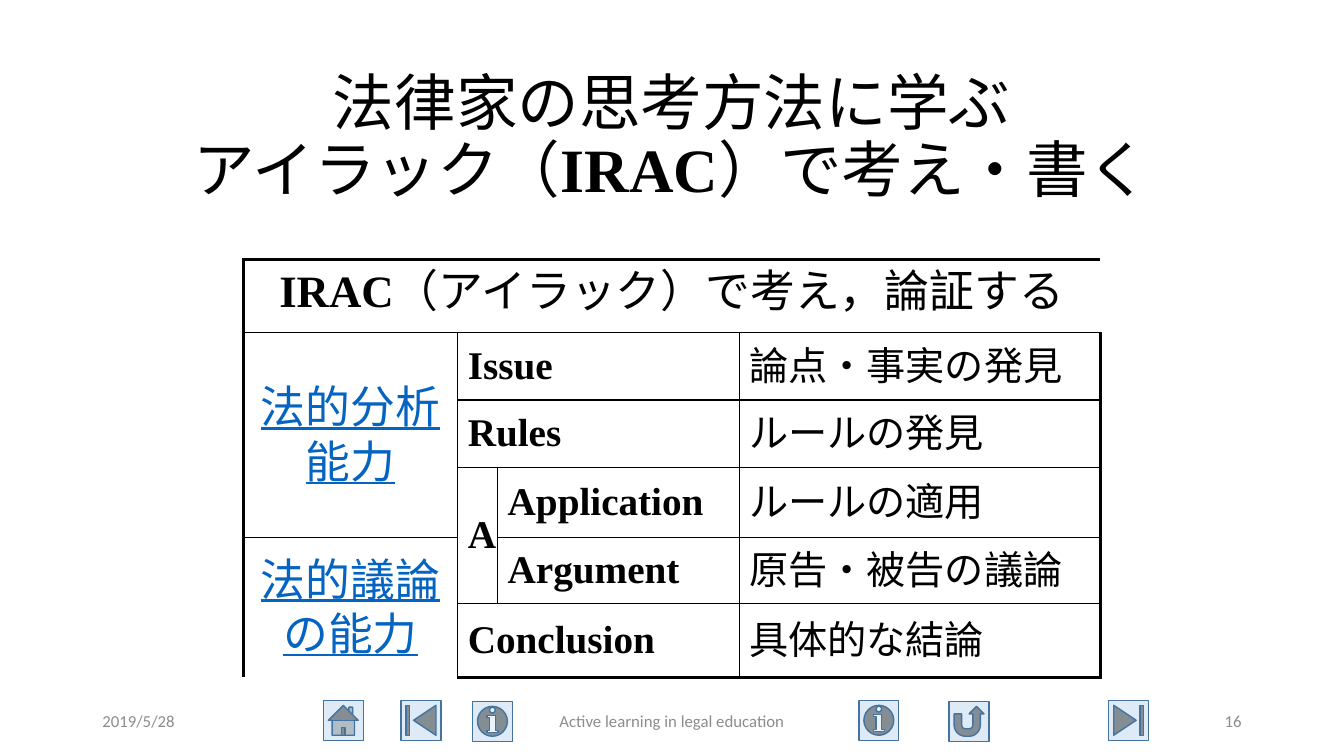
from dataclasses import dataclass

import lxml.etree
import pptx
import pptx.dml.color
import pptx.enum.shapes
import pptx.enum.text
import pptx.oxml.ns
import pptx.util

EMU_PER_PX = 9525
COLORS = {
    "text": "000000",
    "link": "0563C1",
    "footer": "8C8C8C",
    "button": "DEEBF7",
    "button_line": "43739E",
}
SHAPES = pptx.enum.shapes.MSO_SHAPE
ALIGN = pptx.enum.text.PP_ALIGN
ANCHOR = pptx.enum.text.MSO_ANCHOR


@dataclass(frozen=True)
class Style:
    face: str
    size: int
    color: str = "text"
    bold: bool = False
    underline: bool = False


@dataclass(frozen=True)
class Piece:
    text: str
    style: Style


@dataclass(frozen=True)
class Region:
    row: int
    column: int
    pieces: tuple[Piece, ...]
    rows: int = 1
    columns: int = 1
    align: ALIGN = ALIGN.LEFT


@dataclass(frozen=True)
class Label:
    left: int
    top: int
    width: int
    height: int
    pieces: tuple[Piece, ...]
    align: ALIGN
    line_spacing: float = 1.0


@dataclass(frozen=True)
class Button:
    kind: SHAPES
    left: int
    top: int


TITLE = Style("Calibri", 44)
TITLE_LATIN = Style("Times New Roman", 44, bold=True)
HEADING = Style("Cabin", 32)
HEADING_LATIN = Style("Times New Roman", 32, bold=True)
LINK = Style("Cabin", 32, "link", underline=True)
TERM = Style("Times New Roman", 28, bold=True)
MEANING = Style("Cabin", 28)
FOOTER = Style("Calibri", 12, "footer")

LABELS = [
    Label(88, 63, 1104, 139, (
        Piece("法律家の思考方法に学ぶ\nアイラック（", TITLE),
        Piece("IRAC", TITLE_LATIN),
        Piece("）で考え・書く", TITLE),
    ), ALIGN.CENTER, 0.9),
    Label(88, 667, 288, 38, (Piece("2019/5/28", FOOTER),), ALIGN.LEFT),
    Label(424, 667, 432, 38, (Piece("Active learning in legal education", FOOTER),), ALIGN.CENTER),
    Label(904, 667, 288, 38, (Piece("16", FOOTER),), ALIGN.RIGHT),
]
BUTTON_SIZE = 38
BUTTONS = [
    Button(SHAPES.ACTION_BUTTON_HOME, 308, 667),
    Button(SHAPES.ACTION_BUTTON_BEGINNING, 382, 667),
    Button(SHAPES.ACTION_BUTTON_END, 1056, 667),
    Button(SHAPES.ACTION_BUTTON_INFORMATION, 818, 667),
    Button(SHAPES.ACTION_BUTTON_RETURN, 904, 668),
    Button(SHAPES.ACTION_BUTTON_INFORMATION, 450, 668),
]

TABLE_LEFT, TABLE_TOP = 232, 247
COLUMN_WIDTHS = [204, 38, 230, 344]
ROW_HEIGHTS = [70, 64, 64, 67, 63, 70]
TERMS = [
    ("Issue", "論点・事実の発見", 1),
    ("Rules", "ルールの発見", 1),
    ("Application", "ルールの適用", 2),
    ("Argument", "原告・被告の議論", 2),
    ("Conclusion", "具体的な結論", 1),
]
REGIONS = [
    Region(0, 0, (
        Piece("IRAC", HEADING_LATIN),
        Piece("（アイラック）で考え，論証する", HEADING),
    ), columns=4, align=ALIGN.CENTER),
    Region(1, 0, (Piece("法的分析能力", LINK),), rows=3, align=ALIGN.CENTER),
    Region(4, 0, (Piece("法的議論の能力", LINK),), rows=2, align=ALIGN.CENTER),
    Region(3, 1, (Piece("A", TERM),), rows=2, align=ALIGN.CENTER),
]
for term_row, (term, meaning, term_column) in enumerate(TERMS, start=1):
    REGIONS.append(Region(term_row, term_column, (Piece(term, TERM),), columns=3 - term_column))
    REGIONS.append(Region(term_row, 3, (Piece(meaning, MEANING),)))


def px(length: int) -> pptx.util.Emu:
    return pptx.util.Emu(length * EMU_PER_PX)


def rgb(name: str) -> pptx.dml.color.RGBColor:
    return pptx.dml.color.RGBColor.from_string(COLORS[name])


def set_font(font, style: Style) -> None:
    font.name = style.face
    font.size = pptx.util.Pt(style.size)
    font.bold = style.bold
    font.underline = style.underline
    font.color.rgb = rgb(style.color)
    east_asian = lxml.etree.SubElement(font._rPr, pptx.oxml.ns.qn("a:ea"))
    east_asian.set("typeface", style.face)


def write(paragraph, pieces: tuple[Piece, ...], align: ALIGN) -> None:
    paragraph.alignment = align
    shared = len({piece.style for piece in pieces}) == 1
    if shared:
        set_font(paragraph.font, pieces[0].style)
    for piece in pieces:
        for index, line in enumerate(piece.text.split("\n")):
            if index:
                paragraph.add_line_break()
            run = paragraph.add_run()
            run.text = line
            if not shared:
                set_font(run.font, piece.style)


def add_label(slide, label: Label) -> None:
    shape = slide.shapes.add_textbox(px(label.left), px(label.top), px(label.width), px(label.height))
    frame = shape.text_frame
    frame.word_wrap = True
    frame.vertical_anchor = ANCHOR.MIDDLE
    frame.paragraphs[0].line_spacing = label.line_spacing
    write(frame.paragraphs[0], label.pieces, label.align)


def add_button(slide, button: Button) -> None:
    shape = slide.shapes.add_shape(
        button.kind, px(button.left), px(button.top), px(BUTTON_SIZE), px(BUTTON_SIZE))
    shape.shadow.inherit = False
    shape.fill.solid()
    shape.fill.fore_color.rgb = rgb("button")
    shape.line.color.rgb = rgb("button_line")
    shape.line.width = pptx.util.Pt(1)


def set_borders(cell, row: int, column: int, region: Region) -> None:
    last_row = region.row + region.rows - 1
    last_column = region.column + region.columns - 1
    sides = [
        ("a:lnL", column == region.column, column == 0),
        ("a:lnR", column == last_column, column == len(COLUMN_WIDTHS) - 1),
        ("a:lnT", row == region.row, row == 0),
        ("a:lnB", row == last_row, row == len(ROW_HEIGHTS) - 1),
    ]
    properties = cell._tc.get_or_add_tcPr()
    qn = pptx.oxml.ns.qn
    for index, (tag, on_edge, is_outer) in enumerate(sides):
        line = lxml.etree.Element(qn(tag))
        properties.insert(index, line)
        if on_edge:
            line.set("w", str(pptx.util.Pt(2.25 if is_outer else 1)))
            fill = lxml.etree.SubElement(line, qn("a:solidFill"))
            lxml.etree.SubElement(fill, qn("a:srgbClr")).set("val", COLORS["text"])
        else:
            lxml.etree.SubElement(line, qn("a:noFill"))


def add_irac_table(slide) -> None:
    table = slide.shapes.add_table(
        len(ROW_HEIGHTS), len(COLUMN_WIDTHS), px(TABLE_LEFT), px(TABLE_TOP),
        px(sum(COLUMN_WIDTHS)), px(sum(ROW_HEIGHTS))).table
    table.first_row = table.horz_banding = False
    for column, width in zip(table.columns, COLUMN_WIDTHS):
        column.width = px(width)
    for row, height in zip(table.rows, ROW_HEIGHTS):
        row.height = px(height)
    for region in REGIONS:
        for row in range(region.row, region.row + region.rows):
            for column in range(region.column, region.column + region.columns):
                cell = table.cell(row, column)
                cell.fill.background()
                set_borders(cell, row, column, region)
        origin = table.cell(region.row, region.column)
        if region.rows * region.columns > 1:
            origin.merge(cell)
        origin.vertical_anchor = ANCHOR.MIDDLE if region.row else ANCHOR.TOP
        write(origin.text_frame.paragraphs[0], region.pieces, region.align)


def main() -> None:
    presentation = pptx.Presentation()
    presentation.slide_width, presentation.slide_height = px(1280), px(720)
    slide = presentation.slides.add_slide(presentation.slide_layouts[6])
    for button in BUTTONS:
        add_button(slide, button)
    add_irac_table(slide)
    for label in LABELS:
        add_label(slide, label)
    presentation.save("out.pptx")


if __name__ == "__main__":
    main()
